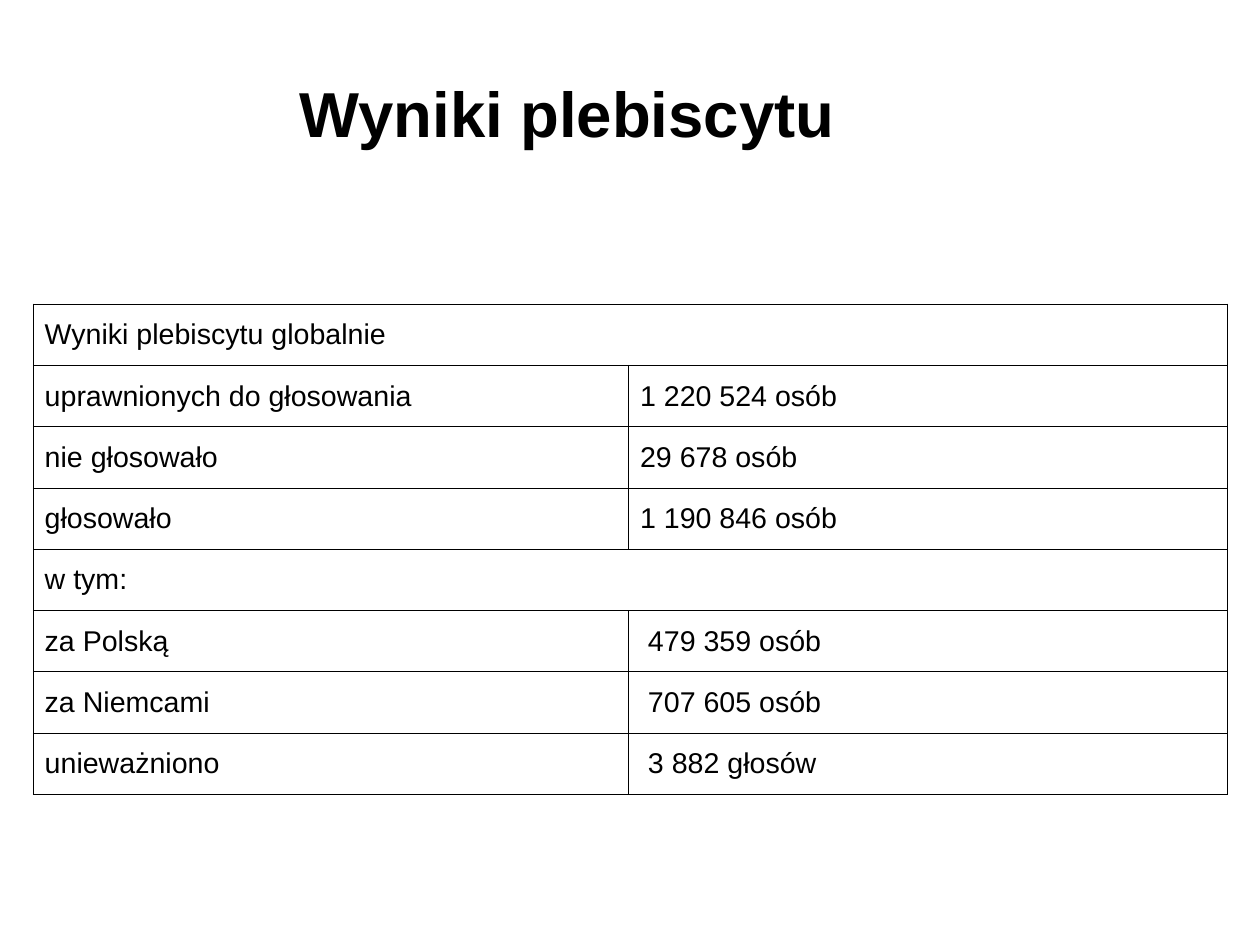
from lxml.etree import SubElement as Sub
from pptx import Presentation
from pptx.dml.color import RGBColor as Rgb
from pptx.enum.text import MSO_ANCHOR as Anchor, PP_ALIGN as Align
from pptx.oxml.ns import qn
from pptx.util import Cm, Pt

COLORS = {"ink": "000000", "paper": "FFFFFF"}

RESULTS = [
    ("Wyniki plebiscytu globalnie", None),
    ("uprawnionych do głosowania", "1 220 524 osób"),
    ("nie głosowało", "29 678 osób"),
    ("głosowało", "1 190 846 osób"),
    ("w tym:", None),
    ("za Polską", " 479 359 osób"),
    ("za Niemcami", " 707 605 osób"),
    ("unieważniono", " 3 882 głosów"),
]


class Page:
    font = "Arial"
    rule = Pt(0.75)

    def __init__(self, slide):
        self.slide = slide

    def style(self, par, size, bold=False):
        par.font.name = self.font
        par.font.size = Pt(size)
        par.font.bold = bold
        par.font.color.rgb = Rgb.from_string(COLORS["ink"])

    def title(self, text, left, top, width, height):
        box = self.slide.shapes.add_textbox(Cm(left), Cm(top), Cm(width), Cm(height))
        frame = box.text_frame
        frame.word_wrap = True
        frame.vertical_anchor = Anchor.MIDDLE
        frame.margin_left = frame.margin_right = 0
        frame.margin_top = frame.margin_bottom = 0
        par = frame.paragraphs[0]
        par.text = text
        par.alignment = Align.CENTER
        par.line_spacing = 0.9
        self.style(par, 40, bold=True)

    def border(self, cell):
        props = cell._tc.get_or_add_tcPr()
        for side in ("a:lnL", "a:lnR", "a:lnT", "a:lnB"):
            line = Sub(props, qn(side), w=str(self.rule))
            fill = Sub(line, qn("a:solidFill"))
            Sub(fill, qn("a:srgbClr"), val=COLORS["ink"])

    def cell(self, cell, text):
        self.border(cell)
        cell.fill.solid()
        cell.fill.fore_color.rgb = Rgb.from_string(COLORS["paper"])
        cell.vertical_anchor = Anchor.MIDDLE
        par = cell.text_frame.paragraphs[0]
        par.text = text
        self.style(par, 18)

    def table(self, rows, left, top, widths, height):
        frame = self.slide.shapes.add_table(
            len(rows), len(widths), Cm(left), Cm(top), Cm(sum(widths)), Cm(height))
        table = frame.table
        table.first_row = table.horz_banding = False
        for col, width in zip(table.columns, widths):
            col.width = Cm(width)
        for i, (label, value) in enumerate(rows):
            # A row without a value spans the whole table
            if value is None:
                table.cell(i, 0).merge(table.cell(i, 1))
            self.cell(table.cell(i, 0), label)
            self.cell(table.cell(i, 1), value or "")


def main():
    deck = Presentation()
    deck.slide_width, deck.slide_height = Cm(28), Cm(21)
    page = Page(deck.slides.add_slide(deck.slide_layouts[6]))

    # Heading
    page.title("Wyniki plebiscytu", 0, 0.84, 25.2, 3.5)

    # Vote counts
    page.table(RESULTS, 0.74, 6.76, (13.23, 13.31), 10.9)

    deck.save("out.pptx")


if __name__ == "__main__":
    main()
